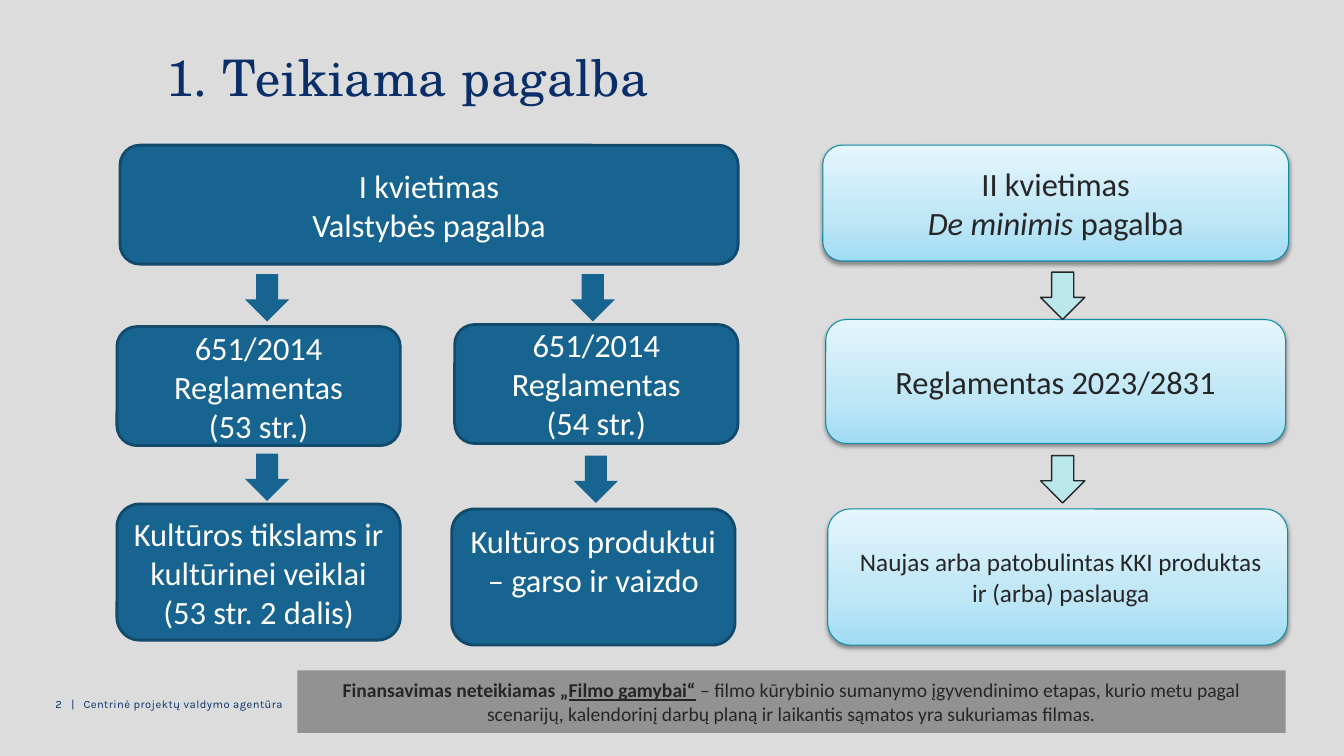
from lxml.etree import SubElement
from pptx import Presentation
from pptx.dml.color import RGBColor
from pptx.enum.shapes import MSO_SHAPE
from pptx.enum.text import MSO_ANCHOR, MSO_AUTO_SIZE, PP_ALIGN
from pptx.oxml.ns import qn
from pptx.util import Inches, Pt

SLIDE_W, SLIDE_H = Inches(13.33), Inches(7.5)

BACKGROUND = RGBColor(0xDC, 0xDC, 0xDC)
NAVY = RGBColor(0x09, 0x2E, 0x68)
BLUE = RGBColor(0x17, 0x64, 0x90)
DARK_BLUE = RGBColor(0x11, 0x4A, 0x6B)
TEAL = RGBColor(0x12, 0x8D, 0xA6)
MINT = RGBColor(0xBA, 0xE7, 0xEA)
GREY = RGBColor(0x92, 0x92, 0x92)
INK = RGBColor(0x26, 0x26, 0x26)
WHITE = RGBColor(0xFF, 0xFF, 0xFF)
BLACK = RGBColor(0, 0, 0)
SKY_STOPS = [
    (0, RGBColor(0xA1, 0xDC, 0xF4)),
    (35, RGBColor(0xBE, 0xE6, 0xF6)),
    (100, RGBColor(0xE5, 0xF6, 0xFD)),
]

# Shares of the slide in percent
ARROW_W, ARROW_H = 3.3, 6.27
BRANCH_W, BRANCH_H = 21.08, 15.73
DE_MINIMIS_W = 34.21
GOAL_H = 18


def place(left, top, width, height):
    """Turn percent of the slide's size into lengths."""
    return (int(SLIDE_W * left / 100), int(SLIDE_H * top / 100),
            int(SLIDE_W * width / 100), int(SLIDE_H * height / 100))


def style_run(run, font_name, size, color, spacing=None):
    run.font.name = font_name
    run.font.size = Pt(size)
    run.font.color.rgb = color
    if spacing:
        run.font._element.set("spc", str(int(spacing * 100)))


def write_centred(shape, paragraphs, size, color):
    """Each paragraph is a list of (text, font flags) pairs."""
    frame = shape.text_frame
    frame.word_wrap = True
    frame.vertical_anchor = MSO_ANCHOR.MIDDLE
    for index, pieces in enumerate(paragraphs):
        paragraph = frame.add_paragraph() if index else frame.paragraphs[0]
        paragraph.alignment = PP_ALIGN.CENTER
        for text, flags in pieces:
            run = paragraph.add_run()
            run.text = text
            style_run(run, "Calibri", size, color)
            for flag in flags:
                setattr(run.font, flag, True)


def plain(*lines):
    return [[(line, ())] for line in lines]


def add_filled(slide, preset, area, fill, line=None, line_width=0):
    shape = slide.shapes.add_shape(preset, *place(*area))
    shape.shadow.inherit = False
    shape.fill.solid()
    shape.fill.fore_color.rgb = fill
    if line is None:
        shape.line.fill.background()
    else:
        shape.line.color.rgb = line
        shape.line.width = Pt(line_width)
    return shape


def add_blue_box(slide, area, *lines):
    box = add_filled(slide, MSO_SHAPE.ROUNDED_RECTANGLE, area, BLUE, DARK_BLUE, 2)
    write_centred(box, plain(*lines), 23.2, WHITE)
    return box


def add_color(parent, color):
    return SubElement(parent, qn("a:srgbClr"), val=str(color))


def add_sky_box(slide, area, paragraphs, size=23.2):
    box = add_filled(slide, MSO_SHAPE.ROUNDED_RECTANGLE, area, WHITE, TEAL, 0.75)
    box.fill.gradient()
    box.fill.gradient_angle = 90
    properties = box._element.spPr
    stops = properties.find(".//" + qn("a:gsLst"))
    for stop in list(stops):
        stops.remove(stop)
    for position, color in SKY_STOPS:
        add_color(SubElement(stops, qn("a:gs"), pos=str(position * 1000)), color)
    # Soft shadow straight below
    shadow = SubElement(properties.find(qn("a:effectLst")), qn("a:outerShdw"),
                        blurRad=str(Pt(3.1)), dist=str(Pt(1.6)),
                        dir="5400000", rotWithShape="0")
    SubElement(add_color(shadow, BLACK), qn("a:alpha"), val="38000")
    write_centred(box, paragraphs, size, INK)
    return box


def add_down_arrow(slide, left, top, fill, line=None):
    add_filled(slide, MSO_SHAPE.DOWN_ARROW, (left, top, ARROW_W, ARROW_H),
               fill, line, 1)


def set_title(slide):
    title = slide.shapes.title
    title.left, title.top, title.width, title.height = place(11.63, 6.93, 83.57, 14.67)
    frame = title.text_frame
    frame.text = "1. Teikiama pagalba"
    frame.vertical_anchor = MSO_ANCHOR.TOP
    frame.auto_size = MSO_AUTO_SIZE.NONE
    heading = frame.paragraphs[0]
    heading.alignment = PP_ALIGN.JUSTIFY
    heading.line_spacing = 0.8
    heading.space_after = Pt(12)
    style_run(heading.runs[0], "TeX Gyre Schola", 36, NAVY, 0.4)


def add_footer(slide):
    footer = slide.shapes.add_textbox(*place(3.38, 91.6, 24, 5.33))
    footer.text_frame.word_wrap = True
    footer.text_frame.text = "2\t|\tCentrinė projektų valdymo agentūra"
    line = footer.text_frame.paragraphs[0]
    tabs = SubElement(line._p.get_or_add_pPr(), qn("a:tabLst"))
    for stop in (0.16, 0.28):
        SubElement(tabs, qn("a:tab"), pos=str(Inches(stop)), algn="l")
    for run in line.runs:
        style_run(run, "Karla", 8, NAVY, 0.3)


def add_state_aid(slide):
    add_blue_box(slide, (8.93, 19.2, 45.99, BRANCH_H),
                 "I kvietimas", "Valstybės pagalba")
    # Regulations
    add_blue_box(slide, (8.7, 43.2, BRANCH_W, BRANCH_H),
                 "651/2014 Reglamentas", "(53 str.)")
    add_blue_box(slide, (33.83, 42.93, BRANCH_W, BRANCH_H),
                 "651/2014 Reglamentas", "(54 str.)")
    # Goals
    add_blue_box(slide, (8.7, 66.67, BRANCH_W, GOAL_H),
                 "Kultūros tikslams ir kultūrinei veiklai", "(53 str. 2 dalis)")
    film = add_blue_box(slide, (33.61, 67.33, BRANCH_W, GOAL_H),
                        "Kultūros produktui – garso ir vaizdo")
    film.text_frame.vertical_anchor = MSO_ANCHOR.TOP
    for left, top in ((18.23, 36.27), (42.46, 36.27), (18.23, 60), (42.69, 60.27)):
        add_down_arrow(slide, left, top, BLUE)


def add_de_minimis_aid(slide):
    add_sky_box(slide, (61.22, 19.2, 34.66, 15.33),
                [[("II kvietimas", ())],
                 [("De minimis", ("italic",)), (" pagalba", ())]])
    add_sky_box(slide, (61.44, 42.27, DE_MINIMIS_W, 16.4),
                plain("Reglamentas 2023/2831"))
    product = add_sky_box(
        slide, (61.59, 67.33, DE_MINIMIS_W, GOAL_H),
        plain("Naujas arba patobulintas KKI produktas ir (arba) paslauga"), 18)
    product.text_frame.margin_left = Inches(0.16)
    for top in (36, 60.27):
        add_down_arrow(slide, 77.42, top, MINT, INK)


def add_film_note(slide):
    note = add_filled(slide, MSO_SHAPE.RECTANGLE, (22.13, 88.67, 73.52, 8.27), GREY)
    write_centred(note, [[
        ("Finansavimas neteikiamas „", ("bold",)),
        ("Filmo gamybai“", ("bold", "underline")),
        (" – filmo kūrybinio sumanymo įgyvendinimo etapas, kurio metu pagal "
         "scenarijų, kalendorinį darbų planą ir laikantis sąmatos yra "
         "sukuriamas filmas.", ()),
    ]], 14, INK)


def main():
    deck = Presentation()
    deck.slide_width, deck.slide_height = SLIDE_W, SLIDE_H
    slide = deck.slides.add_slide(deck.slide_layouts.get_by_name("Title Only"))
    slide.background.fill.solid()
    slide.background.fill.fore_color.rgb = BACKGROUND
    set_title(slide)
    add_state_aid(slide)
    add_de_minimis_aid(slide)
    add_film_note(slide)
    add_footer(slide)
    deck.save("out.pptx")


if __name__ == "__main__":
    main()
